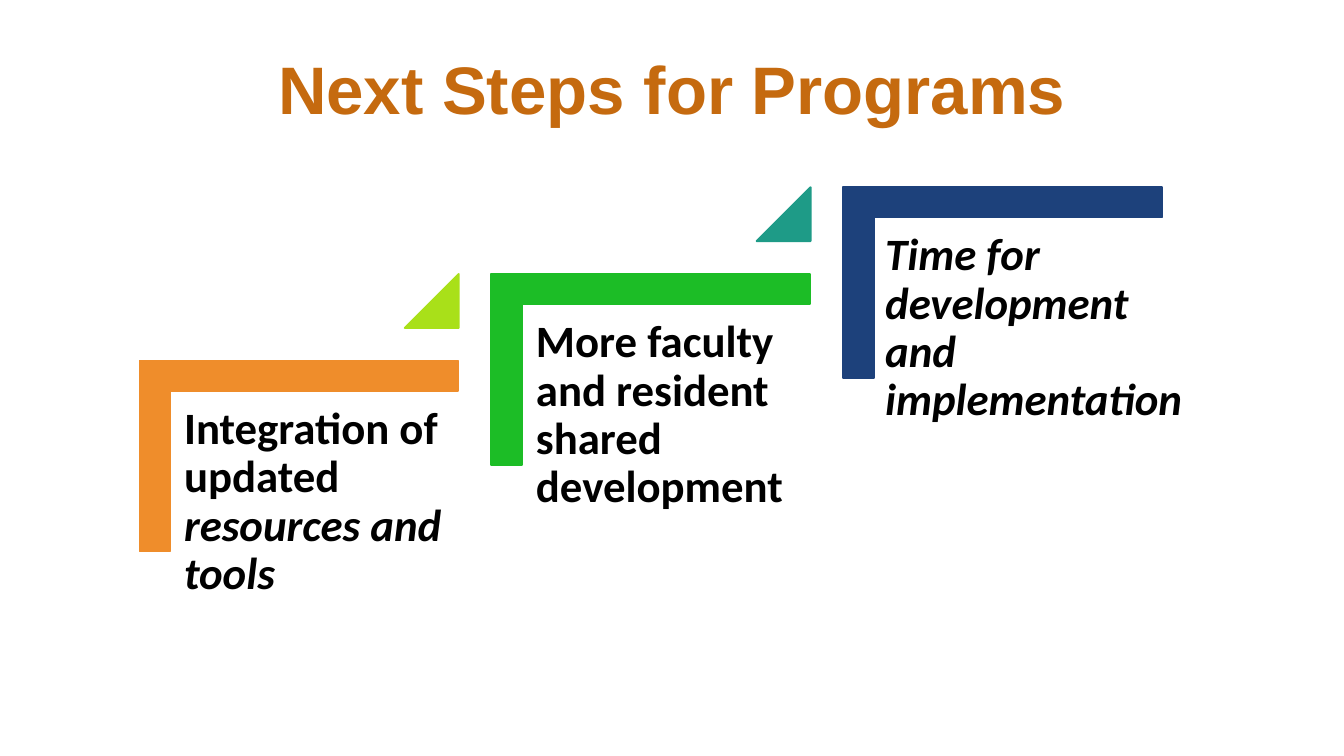
from dataclasses import dataclass
from typing import Optional

from pptx import Presentation
from pptx.dml.color import RGBColor
from pptx.enum.shapes import MSO_SHAPE as Preset
from pptx.enum.text import MSO_ANCHOR as Anchor, PP_ALIGN as Align
from pptx.util import Cm, Pt

# Positions of the first step, and the shift from one step to the next (cm)
CORNER_LEFT, CORNER_TOP = 3.84, 5.61
CORNER_WIDTH, CORNER_HEIGHT = 3.61, 6.02
TEXT_TOP, TEXT_HEIGHT = 7.42, 4.75
ARROW_LEFT, ARROW_TOP, ARROW_SIZE = 7.65, 5.18, 1.02
STEP_RIGHT, STEP_UP = 6.65, 1.64


@dataclass
class Span:
    text: str
    italic: bool = False


@dataclass
class Step:
    color: str
    text_left: float
    text_width: float
    spans: list[Span]
    arrow_color: Optional[str] = None


STEPS = [
    Step("EF8D2B", 3.23, 5.44,
         [Span("Integration of updated "), Span("resources and tools", True)], "A9E019"),
    Step("1CBD26", 9.88, 5.44,
         [Span("More faculty and resident shared development")], "1E9B87"),
    Step("1D417B", 16.48, 6.22,
         [Span("Time for development and implementation", True)]),
]


def rgb(color: str) -> RGBColor:
    return RGBColor.from_string(color)


def add_span(para, span: Span, font: str, size: float, color: str) -> None:
    run = para.add_run()
    run.text = span.text
    run.font.name = font
    run.font.size = Pt(size)
    run.font.bold = True
    run.font.italic = span.italic
    run.font.color.rgb = rgb(color)


def add_solid(page, preset, left: float, top: float, width: float, height: float,
              color: str, adjustments: list[float]):
    shape = page.shapes.add_shape(preset, Cm(left), Cm(top), Cm(width), Cm(height))
    shape.shadow.inherit = False
    shape.fill.solid()
    shape.fill.fore_color.rgb = rgb(color)
    shape.line.color.rgb = rgb(color)
    shape.line.width = Pt(1)
    for index, value in enumerate(adjustments):
        shape.adjustments[index] = value
    return shape


def add_step(page, step: Step, index: int) -> None:
    right, up = index * STEP_RIGHT, index * STEP_UP

    # Corner bracket, turned to open at the lower right
    corner = add_solid(page, Preset.CORNER, CORNER_LEFT + right, CORNER_TOP - up,
                       CORNER_WIDTH, CORNER_HEIGHT, step.color, [0.16, 0.16])
    corner.rotation = 90

    # Step text
    box = page.shapes.add_textbox(Cm(step.text_left), Cm(TEXT_TOP - up),
                                  Cm(step.text_width), Cm(TEXT_HEIGHT))
    frame = box.text_frame
    frame.word_wrap = True
    frame.margin_left = frame.margin_right = Cm(0.25)
    frame.margin_top = frame.margin_bottom = Cm(0.25)
    para = frame.paragraphs[0]
    para.line_spacing = 0.9
    for span in step.spans:
        add_span(para, span, "Calibri", 24, "000000")

    # Triangle leading to the next step
    if step.arrow_color:
        add_solid(page, Preset.ISOSCELES_TRIANGLE, ARROW_LEFT + right, ARROW_TOP - up,
                  ARROW_SIZE, ARROW_SIZE, step.arrow_color, [1])


def add_title(page, text: str) -> None:
    title = page.shapes.title
    title.left, title.top = Cm(1.75), Cm(0.33)
    title.width, title.height = Cm(21.9), Cm(2.84)
    title.text_frame.vertical_anchor = Anchor.MIDDLE
    para = title.text_frame.paragraphs[0]
    para.alignment = Align.CENTER
    para.line_spacing = 0.9
    add_span(para, Span(text), "Arial", 36, "C56A0F")


def main() -> None:
    deck = Presentation()
    deck.slide_width, deck.slide_height = Cm(25.4), Cm(14.29)
    page = deck.slides.add_slide(deck.slide_layouts[5])
    add_title(page, "Next Steps for Programs")
    for index, step in enumerate(STEPS):
        add_step(page, step, index)
    deck.save("out.pptx")


if __name__ == "__main__":
    main()
